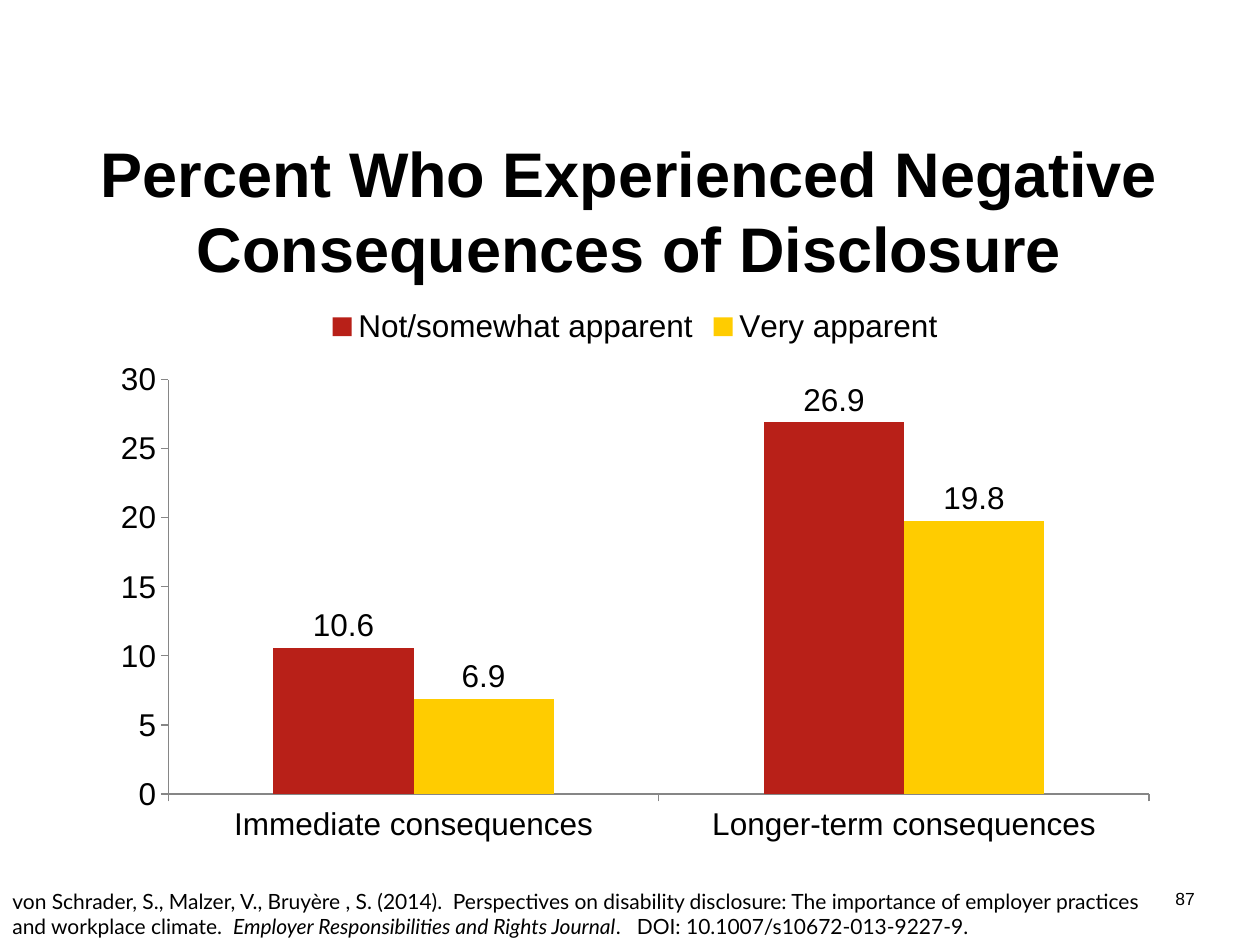
from pptx import Presentation, util as u
from pptx.chart.data import CategoryChartData
from pptx.dml.color import RGBColor
from pptx.enum import chart as charts, text

COLORS = {"text": "000000", "axis": "868686", "hidden": "B82018", "apparent": "FFCC00"}


def format_font(font, **values):
    for name, value in values.items():
        setattr(font, name, value)
    font.color.rgb = RGBColor.from_string(COLORS["text"])


presentation = Presentation()
presentation.slide_width = u.Inches(10)
presentation.slide_height = u.Inches(7.5)
slide = presentation.slides.add_slide(presentation.slide_layouts[5])

title = slide.shapes.title
title_box = {"left": 0.08, "top": 1.08, "width": 9.83, "height": 1.17}
for name, value in title_box.items():
    setattr(title, name, u.Inches(value))
title.text_frame.text = "Percent Who Experienced Negative Consequences of Disclosure"
title_format = {
    "vertical_anchor": text.MSO_ANCHOR.MIDDLE,
    "word_wrap": True,
    "auto_size": text.MSO_AUTO_SIZE.NONE,
}
for name, value in title_format.items():
    setattr(title.text_frame, name, value)
paragraph = title.text_frame.paragraphs[0]
paragraph.alignment = text.PP_ALIGN.CENTER
format_font(paragraph.runs[0].font, name="Arial", size=u.Pt(36), bold=True)

chart_data = CategoryChartData(number_format="General")
chart_data.categories = ["Immediate consequences", "Longer-term consequences"]
chart_data.add_series("Not/somewhat apparent", (10.6, 26.9))
chart_data.add_series("Very apparent", (6.9, 19.8))
chart = slide.shapes.add_chart(
    charts.XL_CHART_TYPE.COLUMN_CLUSTERED,
    u.Inches(0.79), u.Inches(2.33), u.Inches(8.5), u.Inches(4.44), chart_data,
).chart
format_font(chart.font, name="Arial", size=u.Pt(18))
chart.has_title = False
chart.has_legend = True
chart.legend.position = charts.XL_LEGEND_POSITION.TOP
chart.legend.include_in_layout = False

for axis in (chart.category_axis, chart.value_axis):
    axis.has_major_gridlines = False
    axis.major_tick_mark = charts.XL_TICK_MARK.OUTSIDE
    axis.minor_tick_mark = charts.XL_TICK_MARK.NONE
    axis.format.line.color.rgb = RGBColor.from_string(COLORS["axis"])
    axis.format.line.width = u.Pt(0.75)
scale = {"minimum_scale": 0, "maximum_scale": 30, "major_unit": 5}
for name, value in scale.items():
    setattr(chart.value_axis, name, value)

plot = chart.plots[0]
plot.gap_width = 150
plot.overlap = 0
plot.vary_by_categories = False
for series, color in zip(plot.series, ("hidden", "apparent")):
    series.format.fill.solid()
    series.format.fill.fore_color.rgb = RGBColor.from_string(COLORS[color])
    series.data_labels.show_value = True
    series.data_labels.position = charts.XL_LABEL_POSITION.OUTSIDE_END

citation = [
    ("von Schrader, S., Malzer, V., Bruyère , S. (2014).  Perspectives on disability "
     "disclosure: The importance of employer practices and workplace climate.  ", False),
    ("Employer Responsibilities and Rights Journal", True),
    (".   DOI: 10.1007/s10672-013-9227-9.", False),
]
footers = [
    ((7.5, 7, 2.08, 0.5), text.PP_ALIGN.RIGHT, "Arial", 10, [("87", False)]),
    ((0, 7, 9.17, 0.71), text.PP_ALIGN.LEFT, "Lato", 12, citation),
]
for box, alignment, font_name, size, runs in footers:
    frame = slide.shapes.add_textbox(*map(u.Inches, box)).text_frame
    frame.word_wrap = True
    paragraph = frame.paragraphs[0]
    paragraph.alignment = alignment
    for wording, italic in runs:
        run = paragraph.add_run()
        run.text = wording
        format_font(run.font, name=font_name, size=u.Pt(size), italic=italic)

presentation.save("out.pptx")
